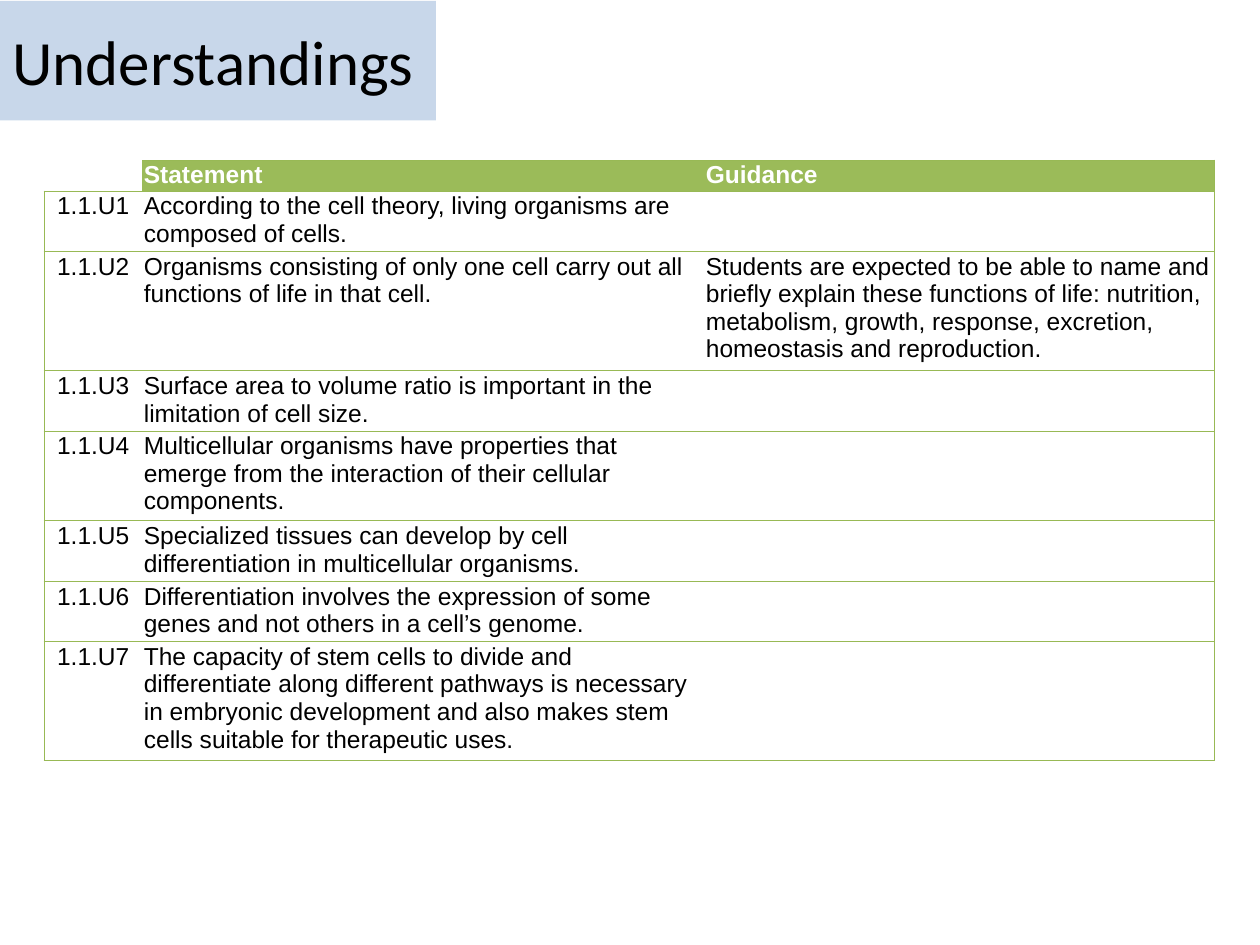
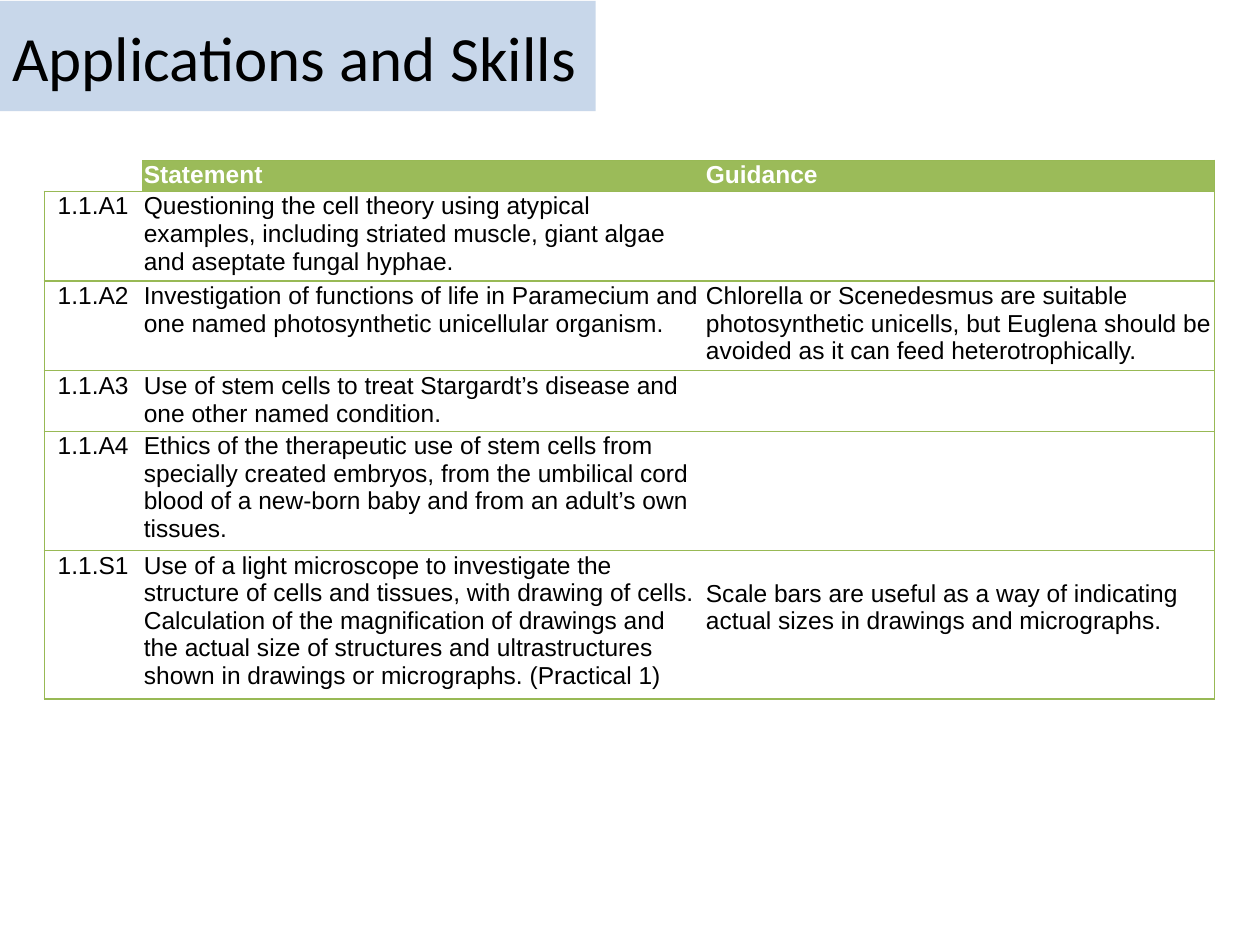
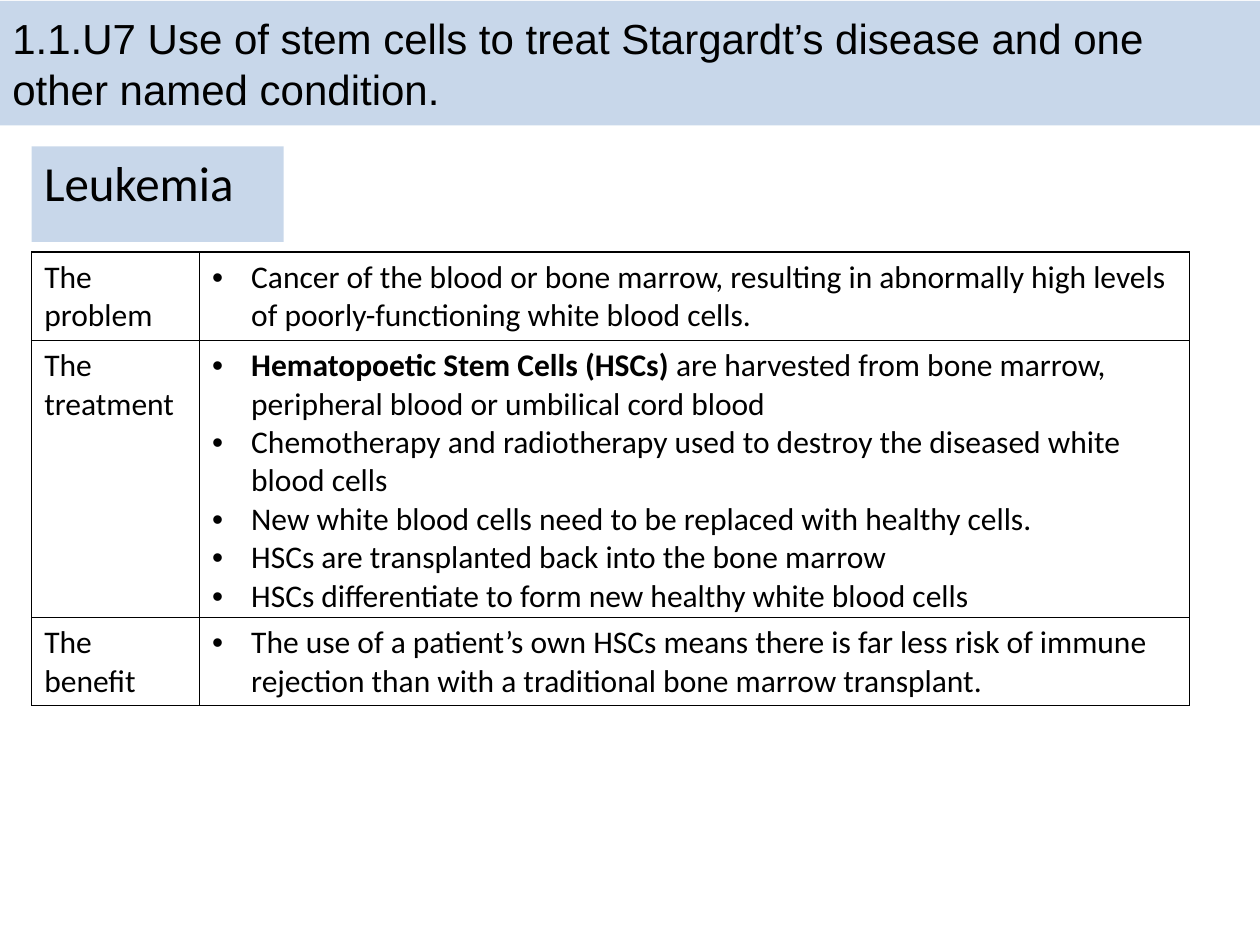
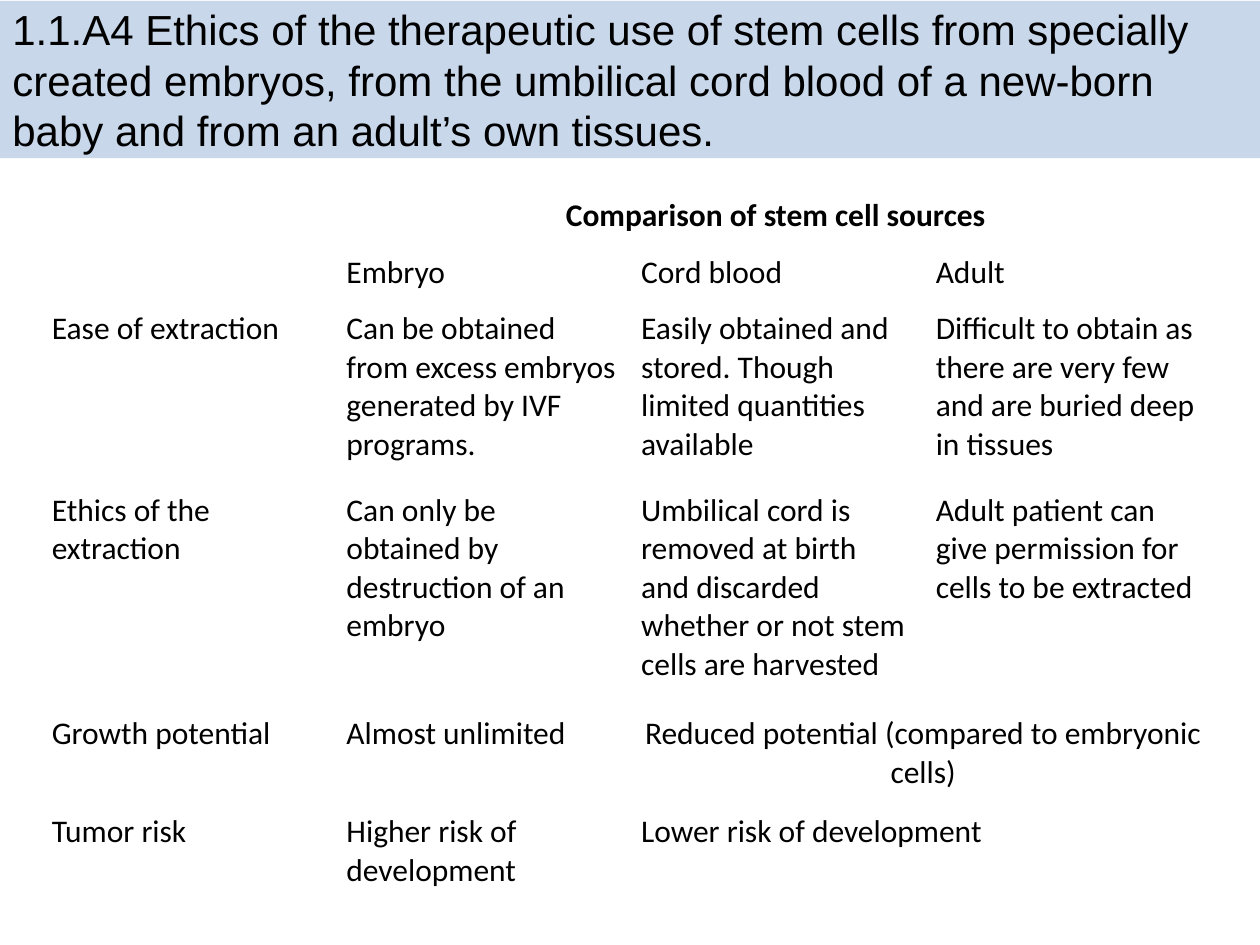
from dataclasses import dataclass

from lxml import etree
from pptx import Presentation
from pptx.dml.color import RGBColor
from pptx.enum.text import MSO_ANCHOR, PP_ALIGN
from pptx.oxml.ns import qn
from pptx.util import Cm, Pt

TOP, MIDDLE = MSO_ANCHOR.TOP, MSO_ANCHOR.MIDDLE
LEFT, CENTER = PP_ALIGN.LEFT, PP_ALIGN.CENTER
PLAIN_STYLE = "{2D5ABB26-0587-4C30-8999-92F81FD0307C}"  # no style, no grid


@dataclass(frozen=True)
class Theme:
    band: str = "B9CDE5"
    header: str = "9BBB59"
    rule: str = "98B955"
    black: str = "000000"
    white: str = "FFFFFF"
    sans: str = "Arial"
    body: str = "Calibri"
    title_size: int = 36
    section_size: int = 28
    heading_size: int = 24
    text_size: int = 18
    syllabus_size: int = 14


theme = Theme()


def add_banner(page, text, left, top, width, height, font, size, anchor=MIDDLE):
    """Place a translucent blue band with one line of heading text."""
    box = page.shapes.add_textbox(Cm(left), Cm(top), Cm(width), Cm(height))
    box.fill.solid()
    box.fill.fore_color.rgb = RGBColor.from_string(theme.band)
    colour = box.fill._xPr.find(qn("a:solidFill"))[0]
    etree.SubElement(colour, qn("a:alpha"), val="78000")
    box.text_frame.word_wrap = True
    box.text_frame.vertical_anchor = anchor
    span = box.text_frame.paragraphs[0].add_run()
    span.text = text
    span.font.name, span.font.size = font, Pt(size)
    span.font.color.rgb = RGBColor.from_string(theme.black)


def dress_cell(cell, paragraphs, font, size, colour=theme.black, align=LEFT, bullets=False,
               sides="", rule=theme.rule, weight=1.0, fill=None, opacity=100):
    """Give a cell its borders, fill and paragraphs, each a list of (text, bold)."""
    properties = cell._tc.get_or_add_tcPr()
    for side in sides:
        line = etree.SubElement(properties, qn("a:ln" + side), w=str(Pt(weight)))
        paint = etree.SubElement(line, qn("a:solidFill"))
        etree.SubElement(paint, qn("a:srgbClr"), val=rule)
    if fill:
        cell.fill.solid()
        cell.fill.fore_color.rgb = RGBColor.from_string(fill)
        if opacity < 100:
            shade = properties.findall(qn("a:solidFill"))[-1][0]
            etree.SubElement(shade, qn("a:alpha"), val=str(opacity * 1000))
    frame = cell.text_frame
    for number, spans in enumerate(paragraphs):
        para = frame.add_paragraph() if number else frame.paragraphs[0]
        para.alignment = align
        if bullets:
            layout = para._p.get_or_add_pPr()
            layout.set("marL", str(Cm(0.79)))
            layout.set("indent", str(-Cm(0.79)))
            etree.SubElement(layout, qn("a:buFont"), typeface=theme.sans)
            etree.SubElement(layout, qn("a:buChar"), char="•")
        for text, bold in spans:
            span = para.add_run()
            span.text = text
            span.font.name, span.font.size, span.font.bold = font, Pt(size), bold
            span.font.color.rgb = RGBColor.from_string(colour)
    if not paragraphs:
        etree.SubElement(frame.paragraphs[0]._p, qn("a:endParaRPr"), sz=str(size * 100))


deck = Presentation()
deck.slide_width, deck.slide_height = Cm(25.4), Cm(19.05)
blank = deck.slide_layouts[6]

# Syllabus pages: title, banner width and height, row heights, rows
header_row = ("", "Statement", "Guidance")
syllabus_pages = [
    ("Understandings", 8.79, 2.41, (0.61, 0.64, 1.7, 0.64, 0.94, 0.64, 0.86, 1.27), [
        header_row,
        ("1.1.U1", "According to the cell theory, living organisms are composed of cells.", ""),
        ("1.1.U2", "Organisms consisting of only one cell carry out all functions of life in "
         "that cell.",
         "Students are expected to be able to name and briefly explain these functions of life: "
         "nutrition, metabolism, growth, response, excretion, homeostasis and reproduction."),
        ("1.1.U3", "Surface area to volume ratio is important in the limitation of cell size.",
         ""),
        ("1.1.U4", "Multicellular organisms have properties that emerge from the interaction of "
         "their cellular components.", ""),
        ("1.1.U5", "Specialized tissues can develop by cell differentiation in multicellular "
         "organisms.", ""),
        ("1.1.U6", "Differentiation involves the expression of some genes and not others in a "
         "cell’s genome.", ""),
        ("1.1.U7", "The capacity of stem cells to divide and differentiate along different "
         "pathways is necessary in embryonic development and also makes stem cells suitable for "
         "therapeutic uses.", ""),
    ]),
    ("Applications and Skills", 12.01, 2.22, (0.61, 0.94, 1.27, 0.64, 1.24, 1.85), [
        header_row,
        ("1.1.A1", "Questioning the cell theory using atypical examples, including striated "
         "muscle, giant algae and aseptate fungal hyphae.", ""),
        ("1.1.A2", "Investigation of functions of life in Paramecium and one named "
         "photosynthetic unicellular organism.",
         "Chlorella or Scenedesmus are suitable photosynthetic unicells, but Euglena should be "
         "avoided as it can feed heterotrophically."),
        ("1.1.A3", "Use of stem cells to treat Stargardt’s disease and one other named "
         "condition.", ""),
        ("1.1.A4", "Ethics of the therapeutic use of stem cells from specially created embryos, "
         "from the umbilical cord blood of a new-born baby and from an adult’s own tissues.",
         ""),
        ("1.1.S1", "Use of a light microscope to investigate the structure of cells and tissues, "
         "with drawing of cells. Calculation of the magnification of drawings and the actual "
         "size of structures and ultrastructures shown in drawings or micrographs. "
         "(Practical 1)",
         "Scale bars are useful as a way of indicating actual sizes in drawings and "
         "micrographs."),
    ]),
]

for title, banner_width, banner_height, heights, rows in syllabus_pages:
    page = deck.slides.add_slide(blank)
    add_banner(page, title, 0, 0.02, banner_width, banner_height, theme.body, theme.title_size)
    table = page.shapes.add_table(len(rows), 3, Cm(0.89), Cm(3.23), Cm(23.6),
                                  Cm(sum(heights))).table
    table._tbl.tblPr.find(qn("a:tableStyleId")).text = PLAIN_STYLE
    table.horz_banding = False
    for column, width in zip(table.columns, (1.98, 11.33, 10.29)):
        column.width = Cm(width)
    for r, (height, row) in enumerate(zip(heights, rows)):
        table.rows[r].height = Cm(height)
        for c, text in enumerate(row):
            cell = table.cell(r, c)
            cell.margin_left = cell.margin_right = cell.margin_top = Cm(0.03)
            cell.margin_bottom = 0
            paragraphs = [[(text, r == 0)]] if text else []
            if r == 0:
                look = dict(colour=theme.white, fill=theme.header if c else None,
                            sides=("", "T", "RT")[c])
            else:
                look = dict(fill=theme.white, align=LEFT if c else CENTER,
                            sides=("LTB", "TB", "RTB")[c])
            dress_cell(cell, paragraphs, theme.sans, theme.syllabus_size, weight=0.75, **look)
            if row[0] == "1.1.S1" and c == 2:
                cell.margin_top = Cm(0.6)  # guidance starts one line lower

# Leukemia page
page = deck.slides.add_slide(blank)
add_banner(page, "1.1.U7 Use of stem cells to treat Stargardt’s disease and one other named "
           "condition.", 0, 0.02, 25.4, 2.51, theme.sans, theme.heading_size)
add_banner(page, "Leukemia", 0.64, 2.95, 5.08, 1.93, theme.body, theme.section_size, TOP)
leukemia = [
    ("The problem", [
        [("Cancer of the blood or bone marrow, resulting in abnormally high levels of "
          "poorly-functioning white blood cells.", False)]]),
    ("The treatment", [
        [("Hematopoetic Stem Cells (HSCs) ", True),
         ("are harvested from bone marrow, peripheral blood or umbilical cord blood", False)],
        [("Chemotherapy and radiotherapy used to destroy the diseased white blood cells", False)],
        [("New white blood cells need to be replaced with healthy cells.", False)],
        [("HSCs are transplanted back into the bone marrow", False)],
        [("HSCs differentiate to form new healthy white blood cells", False)]]),
    ("The benefit", [
        [("The use of a patient’s own HSCs means there is far less risk of immune rejection "
          "than with a traditional bone marrow transplant.", False)]]),
]
table = page.shapes.add_table(3, 2, Cm(0.64), Cm(5.08), Cm(23.34), Cm(3.12)).table
table._tbl.tblPr.find(qn("a:tableStyleId")).text = PLAIN_STYLE
table.first_row = table.horz_banding = False
table.columns[0].width, table.columns[1].width = Cm(3.38), Cm(19.96)
for r, (label, points) in enumerate(leukemia):
    table.rows[r].height = Cm(1.04)
    for c, paragraphs in enumerate(([[(label, False)]], points)):
        dress_cell(table.cell(r, c), paragraphs, theme.body, theme.text_size, bullets=c == 1,
                   sides="LRTB", rule=theme.black, fill=theme.white, opacity=50)

# Stem cell source comparison page
page = deck.slides.add_slide(blank)
add_banner(page, "1.1.A4 Ethics of the therapeutic use of stem cells from specially created "
           "embryos, from the umbilical cord blood of a new-born baby and from an adult’s own "
           "tissues.", 0, 0.02, 25.4, 3.17, theme.sans, theme.heading_size)
comparison = [
    (1.14, ("", "Comparison of stem cell sources", "", "")),
    (1.14, ("", "Embryo", "Cord blood", "Adult")),
    (3.66, ("Ease of extraction",
            "Can be obtained from excess embryos generated by IVF programs.",
            "Easily obtained and stored. Though limited quantities available",
            "Difficult to obtain as there are very few and are buried deep in tissues")),
    (4.5, ("Ethics of the extraction",
           "Can only be obtained by destruction of an embryo",
           "Umbilical cord is removed at birth and discarded whether or not stem cells are "
           "harvested",
           "Adult patient can give permission for cells to be extracted")),
    (1.98, ("Growth potential", "Almost unlimited",
            "Reduced potential (compared to embryonic cells)", "")),
    (1.98, ("Tumor risk", "Higher risk of development", "Lower risk of development", "")),
]
centred = {(0, 1), (4, 2)}
table = page.shapes.add_table(6, 4, Cm(0.79), Cm(3.84), Cm(23.76), Cm(14.4)).table
table._tbl.tblPr.find(qn("a:tableStyleId")).text = PLAIN_STYLE
table.horz_banding = False
for column in table.columns:
    column.width = Cm(5.94)
for r, (height, row) in enumerate(comparison):
    table.rows[r].height = Cm(height)
    for c, text in enumerate(row):
        dress_cell(table.cell(r, c), [[(text, r == 0)]] if text else [], theme.body,
                   theme.text_size, align=CENTER if (r, c) in centred else LEFT, sides="LRTB",
                   rule=theme.white, fill=theme.white if text else None, opacity=60)
for r, first in ((0, 1), (4, 2), (5, 2)):
    table.cell(r, first).merge(table.cell(r, 3))

deck.save("out.pptx")
